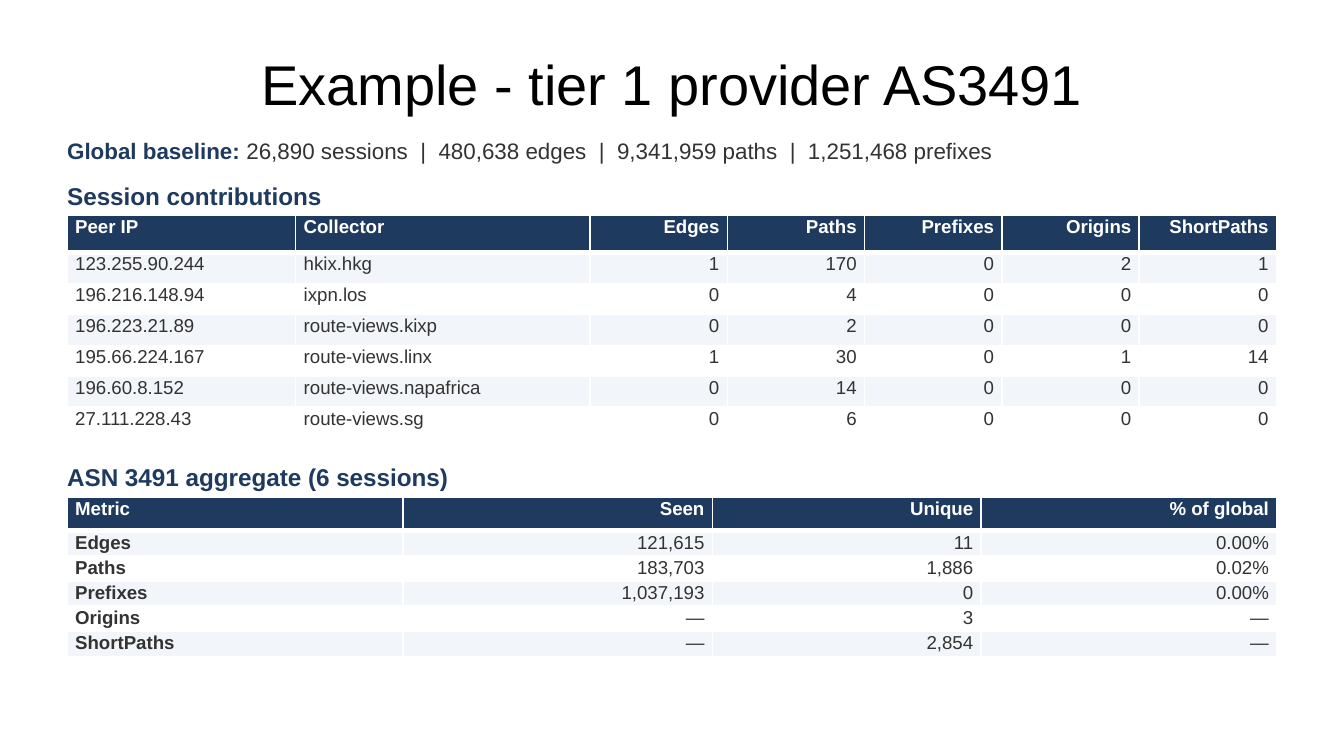
import dataclasses
import typing

import pptx
import pptx.dml.color
import pptx.enum.text
import pptx.oxml
import pptx.oxml.ns
import pptx.util

Inches = pptx.util.Inches
Pt = pptx.util.Pt
Align = pptx.enum.text.PP_ALIGN
Anchor = pptx.enum.text.MSO_ANCHOR
AutoSize = pptx.enum.text.MSO_AUTO_SIZE

NAVY, INK, BAND, WHITE, BLACK = "1F3A5F", "333333", "F2F5F9", "FFFFFF", "000000"
LEFT, WIDTH = 0.5, 9
HEADER_BORDERS = {"lnL": 1, "lnR": 1, "lnT": 1, "lnB": 3}


@dataclasses.dataclass
class Run:
    text: str
    size: float
    color: str
    bold: bool = False


@dataclasses.dataclass
class Label:
    top: float
    height: float
    margin_right: float
    margin_bottom: float
    runs: list[Run]


@dataclasses.dataclass
class Grid:
    top: float
    height: float
    header_height: float
    widths: list[float]
    left_columns: int
    bold_first: bool
    rows: list[list[str]]


def rgb(value: str) -> pptx.dml.color.RGBColor:
    return pptx.dml.color.RGBColor.from_string(value)


def set_all(obj: typing.Any, values: dict[str, typing.Any]) -> None:
    for name, value in values.items():
        setattr(obj, name, value)


def add_run(p: typing.Any, run: Run) -> None:
    r = p.add_run()
    r.text = run.text
    set_all(r.font, {"name": "Arial", "size": Pt(run.size), "bold": run.bold})
    r.font.color.rgb = rgb(run.color)


def add_label(s: typing.Any, label: Label) -> None:
    sp = s.shapes.add_textbox(Inches(LEFT), Inches(label.top),
                              Inches(WIDTH), Inches(label.height))
    tf = sp.text_frame
    set_all(tf, {"word_wrap": False, "auto_size": AutoSize.SHAPE_TO_FIT_TEXT,
                 "margin_left": 0, "margin_top": 0,
                 "margin_right": Inches(label.margin_right),
                 "margin_bottom": Inches(label.margin_bottom)})
    for run in label.runs:
        add_run(tf.paragraphs[0], run)


def add_borders(cell: typing.Any, borders: dict[str, float], color: str) -> None:
    """Put the border lines ahead of the fill, as the schema orders them."""
    tcPr = cell._tc.get_or_add_tcPr()
    for i, (side, width) in enumerate(borders.items()):
        tcPr.insert(i, pptx.oxml.parse_xml(
            f'<a:{side} {pptx.oxml.ns.nsdecls("a")} w="{Pt(width)}">'
            f'<a:solidFill><a:srgbClr val="{color}"/></a:solidFill></a:{side}>'))


def add_grid(s: typing.Any, grid: Grid) -> None:
    body_rows = len(grid.rows) - 1
    row_height = (grid.height - grid.header_height) / body_rows
    heights = [grid.header_height] + [row_height] * body_rows
    table = s.shapes.add_table(len(grid.rows), len(grid.widths), Inches(LEFT),
                               Inches(grid.top), Inches(WIDTH),
                               Inches(grid.height)).table
    for column, width in zip(table.columns, grid.widths):
        column.width = Inches(width)
    for i, (row, height) in enumerate(zip(grid.rows, heights)):
        table.rows[i].height = Inches(height)
        header = i == 0
        fill = NAVY if header else BAND if i % 2 else WHITE
        for j, text in enumerate(row):
            cell = table.cell(i, j)
            set_all(cell, {"margin_left": Inches(0.06), "margin_right": Inches(0.06),
                           "margin_top": Inches(0.01), "margin_bottom": Inches(0.01)})
            cell.fill.solid()
            cell.fill.fore_color.rgb = rgb(fill)
            if header:
                add_borders(cell, HEADER_BORDERS, WHITE)
            p = cell.text_frame.paragraphs[0]
            p.alignment = Align.LEFT if j < grid.left_columns else Align.RIGHT
            bold = header or (grid.bold_first and j == 0)
            add_run(p, Run(text, 10, WHITE if header else INK, bold))


LABELS = [
    Label(1.02, 0.28, 0, 0, [
        Run("Global baseline: ", 12, NAVY, True),
        Run("26,890 sessions  |  480,638 edges  |  9,341,959 paths  |  1,251,468 prefixes",
            12, INK)]),
    Label(1.35, 0.24, 0.1, 0.05, [Run("Session contributions", 13, NAVY, True)]),
    Label(3.44, 0.24, 0.1, 0.05,
          [Run("ASN 3491 aggregate (6 sessions)", 13, NAVY, True)]),
]

COUNT_WIDTH = (WIDTH - 1.7 - 2.19) / 5
SESSIONS = Grid(1.6, 1.66, 0.28, [1.7, 2.19] + [COUNT_WIDTH] * 5, 2, False, [
    ["Peer IP", "Collector", "Edges", "Paths", "Prefixes", "Origins", "ShortPaths"],
    ["123.255.90.244", "hkix.hkg", "1", "170", "0", "2", "1"],
    ["196.216.148.94", "ixpn.los", "0", "4", "0", "0", "0"],
    ["196.223.21.89", "route-views.kixp", "0", "2", "0", "0", "0"],
    ["195.66.224.167", "route-views.linx", "1", "30", "0", "1", "14"],
    ["196.60.8.152", "route-views.napafrica", "0", "14", "0", "0", "0"],
    ["27.111.228.43", "route-views.sg", "0", "6", "0", "0", "0"],
])

AGGREGATE = Grid(3.7, 1.18, 0.25, [2.5, 2.3, 2, 2.2], 1, True, [
    ["Metric", "Seen", "Unique", "% of global"],
    ["Edges", "121,615", "11", "0.00%"],
    ["Paths", "183,703", "1,886", "0.02%"],
    ["Prefixes", "1,037,193", "0", "0.00%"],
    ["Origins", "—", "3", "—"],
    ["ShortPaths", "—", "2,854", "—"],
])


def main() -> None:
    # Widescreen 16:9 slide
    prs = pptx.Presentation()
    set_all(prs, {"slide_width": Inches(10), "slide_height": Inches(10 * 9 / 16)})
    s = prs.slides.add_slide(prs.slide_layouts[5])

    # Title
    title = s.shapes.title
    set_all(title, {"left": Inches(LEFT), "top": Inches(0.23),
                    "width": Inches(WIDTH), "height": Inches(0.77)})
    title.text_frame.vertical_anchor = Anchor.MIDDLE
    p = title.text_frame.paragraphs[0]
    p.alignment = Align.CENTER
    add_run(p, Run("Example - tier 1 provider AS3491", 30, BLACK))

    # Baseline line and table headings
    for label in LABELS:
        add_label(s, label)

    # Tables
    for grid in (SESSIONS, AGGREGATE):
        add_grid(s, grid)

    prs.save("out.pptx")


if __name__ == "__main__":
    main()
